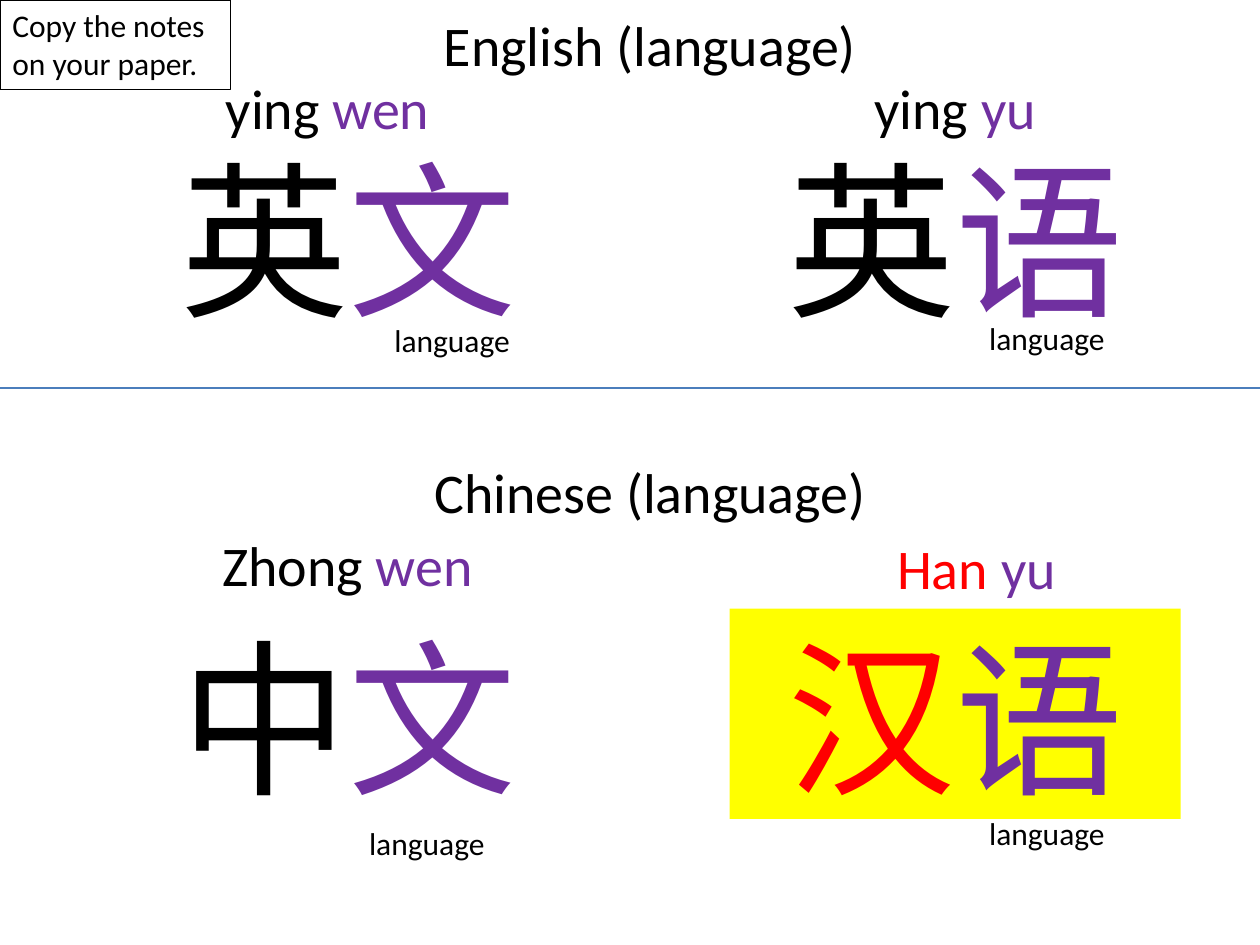
from dataclasses import dataclass

from lxml import etree
from pptx import Presentation
from pptx.dml.color import RGBColor
from pptx.enum.shapes import MSO_CONNECTOR, MSO_SHAPE
from pptx.enum.text import MSO_ANCHOR, PP_ALIGN
from pptx.oxml.ns import qn
from pptx.util import Cm, Pt

LINE, RECT = MSO_CONNECTOR.STRAIGHT, MSO_SHAPE.RECTANGLE
TOP, LEFT, CENTER = MSO_ANCHOR.TOP, PP_ALIGN.LEFT, PP_ALIGN.CENTER


@dataclass(frozen=True)
class Theme:
    """Colours, font and type sizes of the slide."""
    font: str = "Calibri"
    ink: str = "000000"
    suffix: str = "7030A0"
    accent: str = "FF0000"
    highlight: str = "FFFF00"
    rule: str = "4B7EBC"
    heading: int = 32
    character: int = 96
    body: int = 18


T = Theme()


@dataclass(frozen=True)
class Word:
    """A two-syllable word; offsets in cm run from its column's top left."""
    pinyin: tuple
    characters: str
    pinyin_at: tuple
    characters_y: float
    gloss_at: tuple
    color: str = T.ink
    fill: str = None


def add_text(s, box, runs, size, align=CENTER, fill=None, line=None):
    """Place (text, colour) runs in a box in cm, with optional fill and outline."""
    lengths = [Cm(v) for v in box]
    if fill or line:
        sp = s.shapes.add_shape(RECT, *lengths)
        sp.shadow.inherit = False
        sp.fill.background()
        sp.line.fill.background()
    else:
        sp = s.shapes.add_textbox(*lengths)
    if fill:
        sp.fill.solid()
        sp.fill.fore_color.rgb = RGBColor.from_string(fill)
    if line:
        sp.line.color.rgb = RGBColor.from_string(line)
        sp.line.width = Pt(0.75)
    tf = sp.text_frame
    tf.word_wrap = True
    tf.vertical_anchor = TOP
    p = tf.paragraphs[0]
    p.alignment = align
    for text, color in runs:
        r = p.add_run()
        r.text = text
        r.font.name = T.font
        r.font.size = Pt(size)
        r.font.color.rgb = RGBColor.from_string(color)


def add_word(s, left, top, word):
    """Stack pinyin, characters and gloss in one column."""
    width, height = 9.09, 1.9
    first, second = word.pinyin
    dx, dy = word.pinyin_at
    add_text(s, (left + dx, top + dy, width, height),
             [(first + " ", word.color), (second, T.suffix)], T.heading)
    add_text(s, (left, top + word.characters_y, width, 4.24 if word.fill else height),
             zip(word.characters, (word.color, T.suffix)), T.character, fill=word.fill)
    dx, dy = word.gloss_at
    add_text(s, (left + dx, top + dy, 5.38, 1.02), [("language", T.ink)], T.body, LEFT)


def add_panel(s, top, title, words):
    """Place a heading over two word columns."""
    add_text(s, (4.22, top, 17.78, 1.9), [(title, T.ink)], T.heading)
    for left, word in zip((2.49, 14.71), words):
        add_word(s, left, top, word)


def add_divider(s, y, width):
    """Draw the rule between the two panels."""
    cx = s.shapes.add_connector(LINE, Cm(0), Cm(y), Cm(width), Cm(y))
    cx.line.color.rgb = RGBColor.from_string(T.rule)
    cx.line.width = Pt(0.75)
    etree.SubElement(cx._element.spPr, qn("a:effectLst"))


def main():
    """Build and save the slide."""
    prs = Presentation()
    prs.slide_width, prs.slide_height = Cm(25.4), Cm(19.05)
    s = prs.slides.add_slide(prs.slide_layouts[6])
    add_panel(s, 0.08, "English (language)", (
        Word(("ying", "wen"), "英文", (-0.43, 1.27), 2.54, (5.21, 6.27)),
        Word(("ying", "yu"), "英语", (0, 1.27), 2.54, (4.98, 6.22))))
    add_divider(s, 7.82, 25.4)
    add_panel(s, 9.09, "Chinese (language)", (
        Word(("Zhong", "wen"), "中文", (-0.03, 1.48), 3.18, (4.7, 7.39)),
        Word(("Han", "yu"), "汉语", (0.43, 1.55), 3.18, (4.98, 7.19),
             color=T.accent, fill=T.highlight)))
    add_text(s, (0, 0, 4.65, 1.8), [("Copy the notes on your paper.", T.ink)],
             T.body, LEFT, line=T.ink)
    prs.save("out.pptx")


if __name__ == "__main__":
    main()
